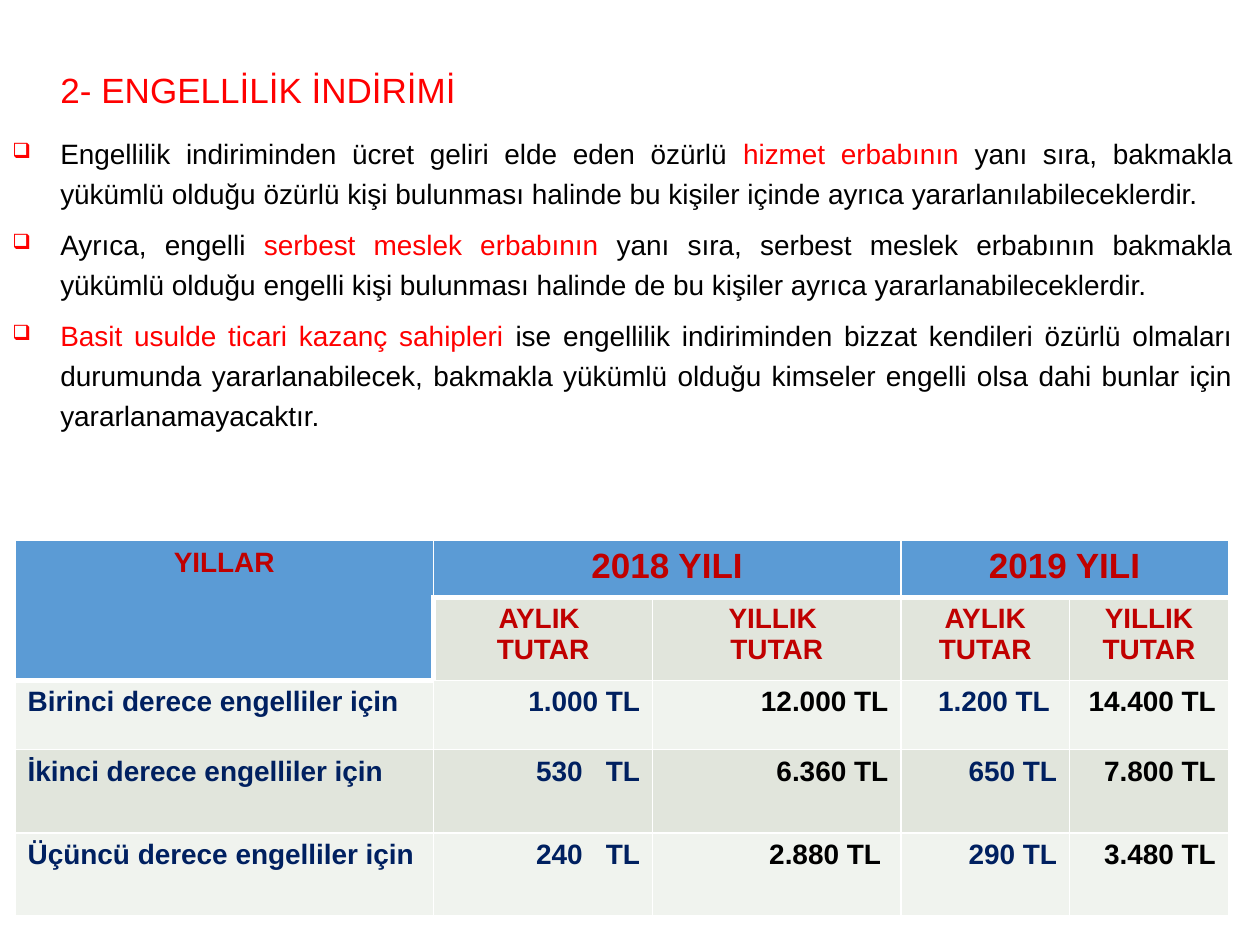
from lxml.etree import SubElement
from pptx import Presentation
from pptx.dml.color import RGBColor
from pptx.enum.text import MSO_ANCHOR, PP_ALIGN
from pptx.oxml.ns import qn
from pptx.util import Inches, Pt

COLORS = {
    "red": "FF0000", "dark_red": "C00000", "navy": "002060", "black": "000000",
    "white": "FFFFFF", "blue": "5B9BD5", "band": "E1E5DC", "light": "F0F3EE",
}
INDENT = Inches(0.38)

HEADING = "2- ENGELLİLİK İNDİRİMİ"
BULLETS = [
    [("Engellilik indiriminden ücret geliri elde eden özürlü ", "black"),
     ("hizmet erbabının ", "red"),
     ("yanı sıra, bakmakla yükümlü olduğu özürlü kişi bulunması halinde "
      "bu kişiler içinde ayrıca yararlanılabileceklerdir. ", "black")],
    [("Ayrıca, engelli ", "black"),
     ("serbest meslek erbabının ", "red"),
     ("yanı sıra, serbest meslek erbabının bakmakla yükümlü olduğu engelli kişi "
      "bulunması halinde de bu kişiler ayrıca yararlanabileceklerdir. ", "black")],
    [("Basit usulde ticari kazanç sahipleri ", "red"),
     ("ise engellilik indiriminden bizzat kendileri özürlü olmaları durumunda "
      "yararlanabilecek, bakmakla yükümlü olduğu kimseler engelli olsa dahi "
      "bunlar için yararlanamayacaktır.", "black")],
]
ROWS = [
    ["YILLAR", "2018 YILI", "", "2019 YILI", ""],
    ["", "AYLIK \nTUTAR", "YILLIK \nTUTAR", "AYLIK TUTAR", "YILLIK TUTAR"],
    ["Birinci derece engelliler için", "1.000 TL", "12.000 TL", "1.200 TL ", "14.400 TL"],
    ["İkinci derece engelliler için", "530   TL", "6.360 TL", "650 TL", "7.800 TL"],
    ["Üçüncü derece engelliler için", "240   TL", "2.880 TL ", "290 TL", "3.480 TL"],
]
MERGES = [((0, 0), (1, 0)), ((0, 1), (0, 2)), ((0, 3), (0, 4))]
COLUMN_WIDTHS = [3.32, 1.74, 1.97, 1.34, 1.26]
ROW_HEIGHTS = [0.45, 0.66, 0.55, 0.66, 0.66]


class SlideBuilder:
    def __init__(self, slide, font_name="Arial"):
        self.slide = slide
        self.font_name = font_name

    def format_font(self, font, color, size=16, bold=False):
        values = {"name": self.font_name, "size": Pt(size), "bold": bold}
        for name, value in values.items():
            setattr(font, name, value)
        font.color.rgb = RGBColor.from_string(COLORS[color])

    def place(self, shape, left, top, width, height):
        box = {"left": left, "top": top, "width": width, "height": height}
        for name, value in box.items():
            setattr(shape, name, Inches(value))

    def title(self, text, *box):
        shape = self.slide.shapes.title
        self.place(shape, *box)
        frame = shape.text_frame
        frame.text = text
        frame.vertical_anchor = MSO_ANCHOR.TOP
        paragraph = frame.paragraphs[0]
        paragraph.alignment = PP_ALIGN.LEFT
        paragraph.line_spacing = 0.9
        self.format_font(paragraph.runs[0].font, "red", 20)

    def bullets(self, items, *box):
        shape = self.slide.shapes.add_textbox(*map(Inches, box))
        frame = shape.text_frame
        frame.word_wrap = True
        layout = {"alignment": PP_ALIGN.JUSTIFY, "line_spacing": Pt(23),
                  "space_after": Pt(6)}
        for index, item in enumerate(items):
            paragraph = frame.add_paragraph() if index else frame.paragraphs[0]
            for name, value in layout.items():
                setattr(paragraph, name, value)
            self.add_bullet(paragraph)
            for text, color in item:
                run = paragraph.add_run()
                run.text = text
                self.format_font(run.font, color)

    def add_bullet(self, paragraph):
        properties = paragraph._p.get_or_add_pPr()
        properties.set("marL", str(INDENT))
        properties.set("indent", str(-INDENT))
        bullet_color = SubElement(properties, qn("a:buClr"))
        SubElement(bullet_color, qn("a:srgbClr"), val=COLORS["red"])
        SubElement(properties, qn("a:buSzPct"), val="75000")
        SubElement(properties, qn("a:buChar"), char="❑")

    def table(self, rows, column_widths, row_heights, left, top):
        shape = self.slide.shapes.add_table(
            len(rows), len(column_widths), Inches(left), Inches(top),
            Inches(sum(column_widths)), Inches(sum(row_heights)))
        table = shape.table
        for column, width in zip(table.columns, column_widths):
            column.width = Inches(width)
        for row, height in zip(table.rows, row_heights):
            row.height = Inches(height)
        for start, end in MERGES:
            table.cell(*start).merge(table.cell(*end))
        for row_index, texts in enumerate(rows):
            for column_index, text in enumerate(texts):
                self.cell(table.cell(row_index, column_index), text,
                          row_index, column_index)

    def cell(self, cell, text, row, column):
        in_header = row == 0 or (row == 1 and column == 0)
        self.cell_borders(cell, {
            "L": row == 1 and column == 1,
            "R": row == 1 and column == 0,
            "T": row == 1 or (row == 2 and column == 0),
            "B": in_header,
        })
        fill = "blue" if in_header else "band" if row % 2 else "light"
        cell.fill.solid()
        cell.fill.fore_color.rgb = RGBColor.from_string(COLORS[fill])
        if not text:
            return
        if row < 2:
            alignment, color = PP_ALIGN.CENTER, "dark_red"
        else:
            alignment = PP_ALIGN.RIGHT if column else PP_ALIGN.LEFT
            color = "black" if column in (2, 4) else "navy"
        size = 20 if row == 0 and column else 16
        cell.text = text
        for paragraph in cell.text_frame.paragraphs:
            paragraph.alignment = alignment
            self.format_font(paragraph.runs[0].font, color, size, True)

    def cell_borders(self, cell, thick_sides):
        """Draw white borders, 3 pt on the thick sides and 1 pt elsewhere."""
        properties = cell._tc.get_or_add_tcPr()
        for side, thick in thick_sides.items():
            line = SubElement(properties, qn(f"a:ln{side}"),
                              w=str(Pt(3 if thick else 1)))
            fill = SubElement(line, qn("a:solidFill"))
            SubElement(fill, qn("a:srgbClr"), val=COLORS["white"])


def main():
    presentation = Presentation()
    presentation.slide_width = Inches(10)
    presentation.slide_height = Inches(7.5)
    title_only = presentation.slide_layouts[5]
    builder = SlideBuilder(presentation.slides.add_slide(title_only))
    builder.title(HEADING, 0.38, 0.53, 9.5, 0.45)
    builder.bullets(BULLETS, 0, 0.98, 9.88, 3.2)
    builder.table(ROWS, COLUMN_WIDTHS, ROW_HEIGHTS, 0.12, 4.29)
    presentation.save("out.pptx")


if __name__ == "__main__":
    main()
